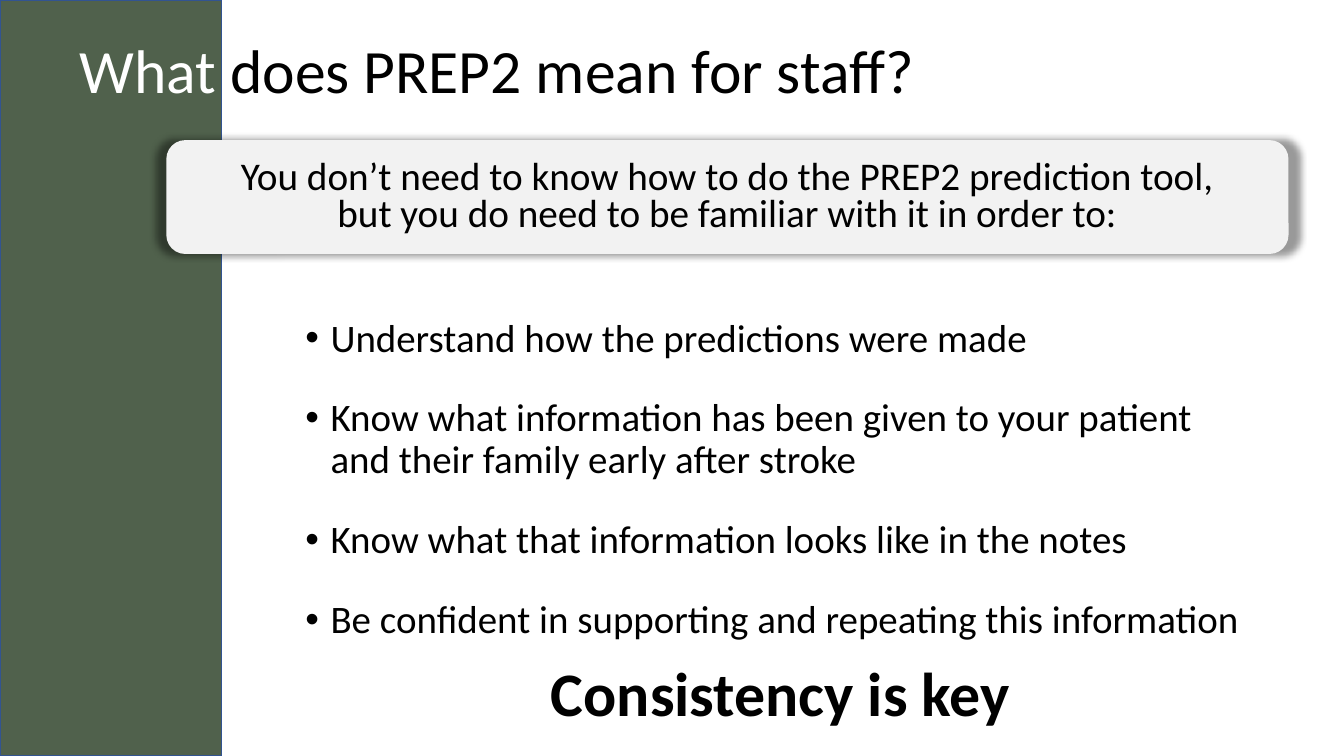
from dataclasses import dataclass

from lxml.etree import SubElement
from pptx import Presentation
from pptx.dml.color import RGBColor
from pptx.enum.shapes import MSO_SHAPE
from pptx.enum.text import MSO_ANCHOR, PP_ALIGN
from pptx.oxml.ns import qn
from pptx.util import Pt

TITLE = [("What ", "FFFFFF"), ("does PREP2 mean for staff?", "000000")]
INTRO = ("You don’t need to know how to do the PREP2 prediction tool, "
         "but you do need to be familiar with it in order to:")
GOALS = [
    "Understand how the predictions were made",
    "Know what information has been given to your patient and their family early after stroke",
    "Know what that information looks like in the notes",
    "Be confident in supporting and repeating this information",
]
MOTTO = "Consistency is key"

SLIDE_SIZE = (1333, 750)
SIDEBAR = (0, 0, 220, 750)
CARD = (165, 139, 1113, 113)
TITLE_AREA = (69, 0, 963, 145)
INTRO_AREA = (215, 154, 1012, 91)
GOALS_AREA = (243, 311, 1012, 350)
MOTTO_AREA = (412, 665, 674, 64)
EMU_PER_PX = 9144


@dataclass(frozen=True)
class Theme:
    font: str = "Calibri"
    ink: str = "000000"
    sidebar: str = "50614C"
    sidebar_edge: str = "325491"
    card: str = "F2F2F2"
    title_size: float = 44
    intro_size: float = 28
    goal_size: float = 27.8
    motto_size: float = 44.2


THEME = Theme()


def px(length):
    return length * EMU_PER_PX


def add_panel(slide, preset, area, fill, edge=None):
    panel = slide.shapes.add_shape(preset, *map(px, area))
    panel.fill.solid()
    panel.fill.fore_color.rgb = RGBColor.from_string(fill)
    if edge:
        panel.line.color.rgb = RGBColor.from_string(edge)
        panel.line.width = Pt(1)
    else:
        panel.line.fill.background()
    panel.shadow.inherit = False
    return panel


def add_glow_shadow(panel):
    effects = panel._element.spPr.find(qn("a:effectLst"))
    shadow = SubElement(effects, qn("a:outerShdw"), blurRad=str(Pt(5)), dist="0",
                        sx="102000", sy="102000", algn="ctr", rotWithShape="0")
    tone = SubElement(shadow, qn("a:srgbClr"), val=THEME.ink)
    SubElement(tone, qn("a:alpha"), val="40000")


def add_text(slide, area, paragraphs, *, size, spacing=0.9, align=PP_ALIGN.LEFT,
             anchor=MSO_ANCHOR.TOP, bold=False, margin=0, hanging=0, bullet=None, gap=0):
    frame = slide.shapes.add_textbox(*map(px, area)).text_frame
    frame.word_wrap = True
    frame.vertical_anchor = anchor
    for index, content in enumerate(paragraphs):
        paragraph = frame.paragraphs[0] if index == 0 else frame.add_paragraph()
        properties = paragraph._p.get_or_add_pPr()
        properties.set("marL", str(px(margin)))
        properties.set("indent", str(-px(hanging)))
        if bullet:
            SubElement(properties, qn("a:buFont"), typeface="Arial")
            SubElement(properties, qn("a:buChar"), char=bullet)
        paragraph.alignment = align
        paragraph.line_spacing = spacing
        if index:
            paragraph.space_before = Pt(gap)
        portions = [(content, THEME.ink)] if isinstance(content, str) else content
        for wording, color in portions:
            run = paragraph.add_run()
            run.text = wording
            run.font.name = THEME.font
            run.font.size = Pt(size)
            run.font.bold = bold
            run.font.color.rgb = RGBColor.from_string(color)


def main():
    deck = Presentation()
    deck.slide_width, deck.slide_height = map(px, SLIDE_SIZE)
    slide = deck.slides.add_slide(deck.slide_layouts[6])

    add_panel(slide, MSO_SHAPE.RECTANGLE, SIDEBAR, THEME.sidebar, THEME.sidebar_edge)
    add_glow_shadow(add_panel(slide, MSO_SHAPE.ROUNDED_RECTANGLE, CARD, THEME.card))

    add_text(slide, TITLE_AREA, [TITLE], size=THEME.title_size, anchor=MSO_ANCHOR.MIDDLE)
    add_text(slide, INTRO_AREA, [INTRO], size=THEME.intro_size, spacing=0.8,
             align=PP_ALIGN.CENTER)
    add_text(slide, GOALS_AREA, GOALS, size=THEME.goal_size, margin=75, hanging=25,
             bullet="•", gap=27)
    add_text(slide, MOTTO_AREA, [MOTTO], size=THEME.motto_size, spacing=0.7,
             align=PP_ALIGN.CENTER, bold=True, margin=50)

    deck.save("out.pptx")


if __name__ == "__main__":
    main()
